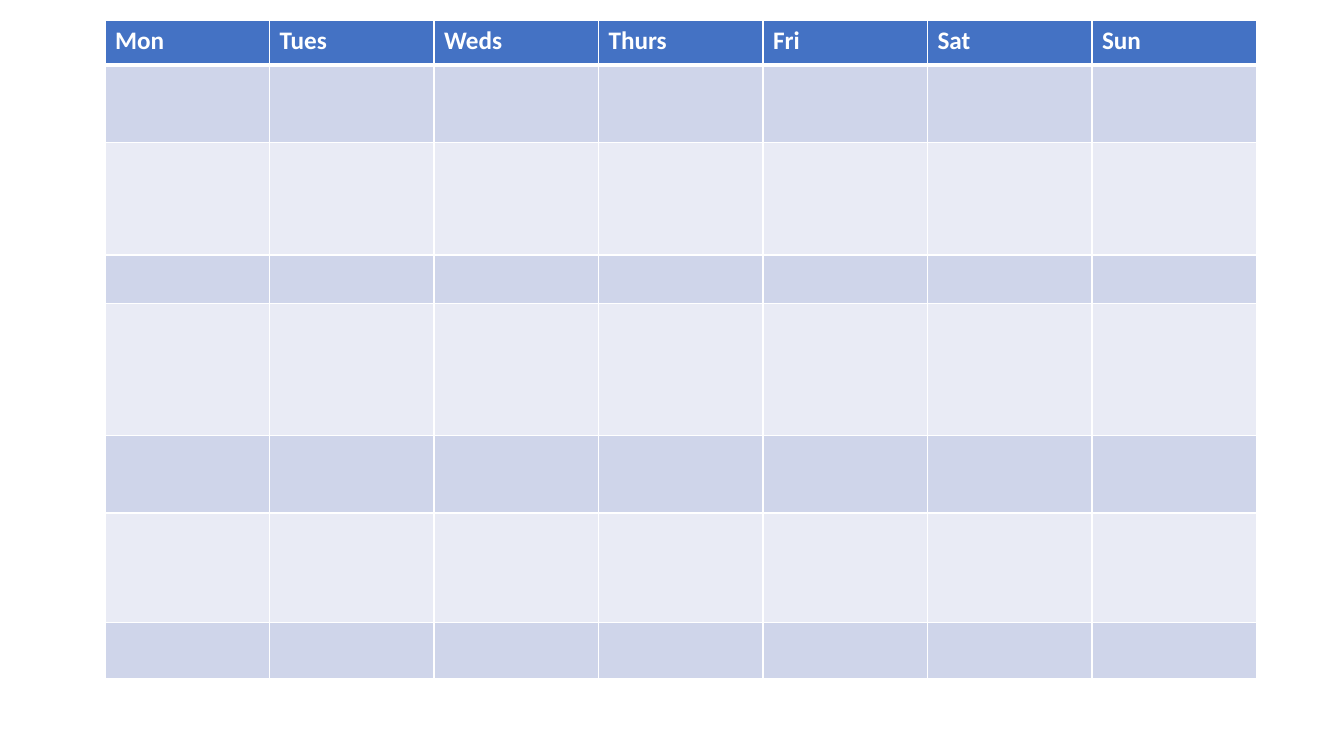
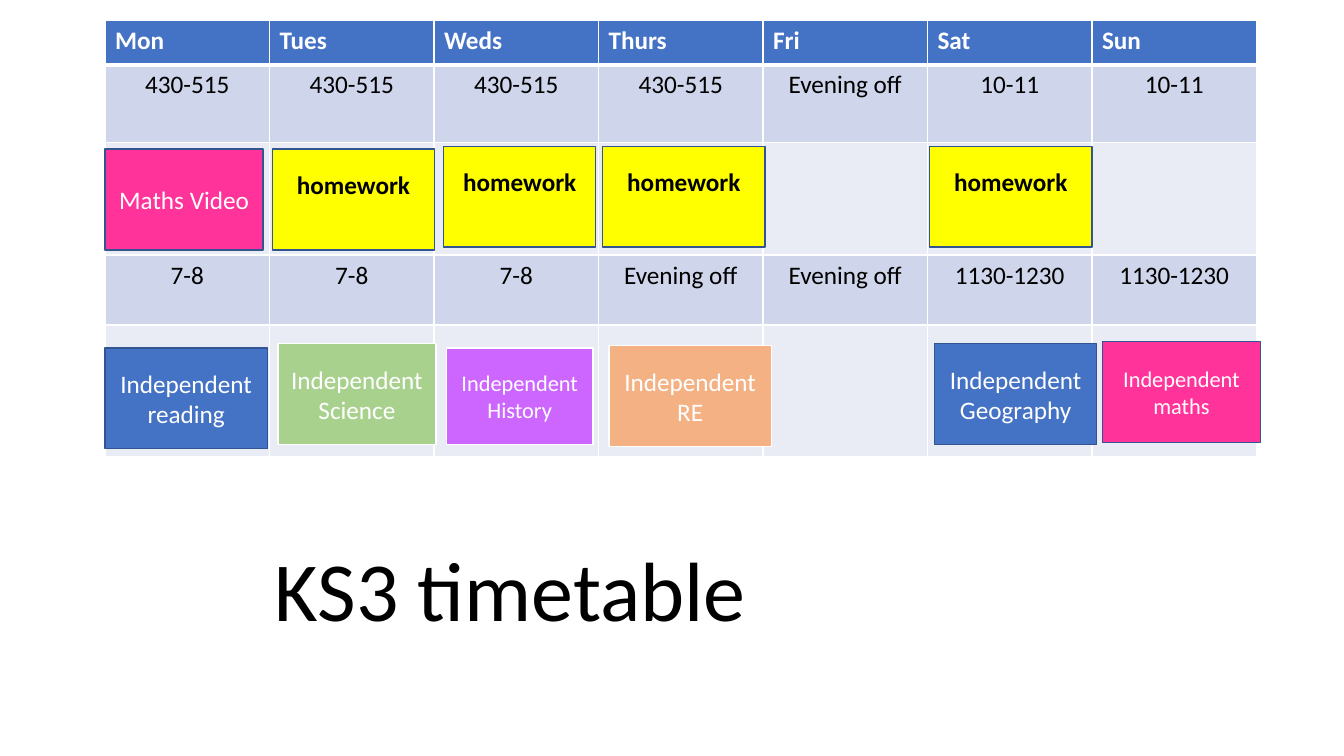
from dataclasses import dataclass

from lxml import etree
from pptx import Presentation
from pptx.dml.color import RGBColor
from pptx.enum.shapes import MSO_SHAPE
from pptx.enum.text import MSO_ANCHOR, MSO_AUTO_SIZE, PP_ALIGN
from pptx.oxml.ns import qn
from pptx.util import Pt

RECTANGLE = MSO_SHAPE.RECTANGLE
MIDDLE = MSO_ANCHOR.MIDDLE
NO_AUTOFIT = MSO_AUTO_SIZE.NONE
LEFT, CENTER = PP_ALIGN.LEFT, PP_ALIGN.CENTER
TITLE_ONLY, BLANK = 5, 6


@dataclass(frozen=True)
class Theme:
    font: str = "Calibri"
    white: str = "FFFFFF"
    black: str = "000000"
    blue: str = "4472C4"
    outline: str = "325491"
    band_dark: str = "CFD5EA"
    band_light: str = "E9EBF5"
    pink: str = "FF3399"
    yellow: str = "FFFF00"
    green: str = "A9D18E"
    purple: str = "CC66FF"
    orange: str = "F4B183"
    title_size: int = 60
    body_size: int = 18
    small_size: int = 16


THEME = Theme()
DAYS = ["Mon", "Tues", "Weds", "Thurs", "Fri", "Sat", "Sun"]
TABLE_LEFT, TABLE_TOP, COLUMN_WIDTH = 75, 14.5, 117.5
HEADER_HEIGHT = 31.7
WEEK_HEIGHTS = [55.4, 80.6, 34.6, 94.3, 55.4, 78.5, 39.6]
KS3_HEIGHTS = [55.4, 80.6, 50, 94.3]
KS3_ROWS = [
    ["430-515"] * 4 + ["Evening off"] + ["10-11"] * 2,
    [""] * 7,
    ["7-8"] * 3 + ["Evening off"] * 2 + ["1130-1230"] * 2,
    [""] * 7,
]
HOMEWORK_BOXES = [
    (194.5, 106.5, 116),
    (317, 104.5, 108.5),
    (430.5, 104.5, 116),
    (664, 104.5, 116),
]
SUBJECT_CARDS = [
    ("Maths Video", (75, 106.5, 113, 72), THEME.pink, THEME.outline, THEME.body_size),
    ("Independent reading", (75, 248.5, 116, 72), THEME.blue, THEME.outline, THEME.body_size),
    ("Independent Science", (198.5, 245.5, 113, 72), THEME.green, THEME.white, THEME.body_size),
    ("Independent History", (319, 248.5, 104.5, 69), THEME.purple, THEME.white, THEME.small_size),
    ("Independent RE", (435, 247, 116, 72), THEME.orange, THEME.white, THEME.body_size),
    ("Independent Geography", (667.5, 245.5, 116, 72), THEME.blue, THEME.outline, THEME.body_size),
    ("Independent maths", (787.5, 244, 113, 72), THEME.pink, THEME.outline, THEME.small_size),
]


class TimetableDeck:
    def __init__(self, theme):
        self.theme = theme
        self.presentation = Presentation()
        self.presentation.slide_width = Pt(960)
        self.presentation.slide_height = Pt(540)
        self.slide = None

    def add_slide(self, layout):
        self.slide = self.presentation.slides.add_slide(
            self.presentation.slide_layouts[layout])

    def paint(self, fill, color):
        fill.solid()
        fill.fore_color.rgb = RGBColor.from_string(color)

    def set_text(self, text_frame, text, size, color, bold=False, alignment=CENTER):
        text_frame.text = text
        paragraph = text_frame.paragraphs[0]
        paragraph.alignment = alignment
        for run in paragraph.runs:
            run.font.name = self.theme.font
            run.font.size = Pt(size)
            run.font.bold = bold
            run.font.color.rgb = RGBColor.from_string(color)

    def border(self, cell, bottom_width):
        properties = cell._tc.get_or_add_tcPr()
        for side, width in (("L", 1), ("R", 1), ("T", 1), ("B", bottom_width)):
            line = etree.SubElement(properties, qn(f"a:ln{side}"), w=str(Pt(width)))
            fill = etree.SubElement(line, qn("a:solidFill"))
            etree.SubElement(fill, qn("a:srgbClr"), val=self.theme.white)

    def timetable(self, rows, heights):
        theme = self.theme
        heights = [HEADER_HEIGHT] + heights
        table = self.slide.shapes.add_table(
            len(heights), len(DAYS), Pt(TABLE_LEFT), Pt(TABLE_TOP),
            Pt(COLUMN_WIDTH * len(DAYS)), Pt(sum(heights))).table
        for column in table.columns:
            column.width = Pt(COLUMN_WIDTH)
        for row_index, texts in enumerate([DAYS] + rows):
            header = row_index == 0
            table.rows[row_index].height = Pt(heights[row_index])
            band = theme.band_dark if row_index % 2 else theme.band_light
            for column_index, text in enumerate(texts):
                cell = table.cell(row_index, column_index)
                self.border(cell, 3 if header else 1)
                self.paint(cell.fill, theme.blue if header else band)
                self.set_text(cell.text_frame, text, theme.body_size,
                              theme.white if header else theme.black,
                              header, LEFT if header else CENTER)

    def title(self, text, left, top, width, height):
        shape = self.slide.shapes.title
        shape.left, shape.top = Pt(left), Pt(top)
        shape.width, shape.height = Pt(width), Pt(height)
        self.paint(shape.fill, self.theme.white)
        text_frame = shape.text_frame
        text_frame.auto_size = NO_AUTOFIT
        text_frame.vertical_anchor = MIDDLE
        text_frame.margin_right = Pt(20.7)
        self.set_text(text_frame, text, self.theme.title_size, self.theme.black)

    def card(self, text, box, fill, outline, size):
        shape = self.slide.shapes.add_shape(RECTANGLE, *map(Pt, box))
        shape.shadow.inherit = False
        self.paint(shape.fill, fill)
        self.paint(shape.line.fill, outline)
        shape.line.width = Pt(1)
        shape.text_frame.word_wrap = True
        shape.text_frame.vertical_anchor = MIDDLE
        self.set_text(shape.text_frame, text, size, self.theme.white)
        return shape

    def homework(self, left, top, width):
        theme = self.theme
        shape = self.card("homework", (left, top, width, 72), theme.yellow,
                          theme.outline, theme.body_size)
        shape.text_frame.margin_bottom = Pt(25.6)
        font = shape.text_frame.paragraphs[0].runs[0].font
        font.bold = True
        font.color.rgb = RGBColor.from_string(theme.black)


def main():
    deck = TimetableDeck(THEME)

    deck.add_slide(BLANK)
    deck.timetable([[""] * len(DAYS) for _ in WEEK_HEIGHTS], WEEK_HEIGHTS)

    deck.add_slide(TITLE_ONLY)
    deck.title("KS3 timetable", 75, 326, 592.5, 188)
    deck.timetable(KS3_ROWS, KS3_HEIGHTS)
    for box in HOMEWORK_BOXES:
        deck.homework(*box)
    for card in SUBJECT_CARDS:
        deck.card(*card)

    deck.presentation.save("out.pptx")


if __name__ == "__main__":
    main()
